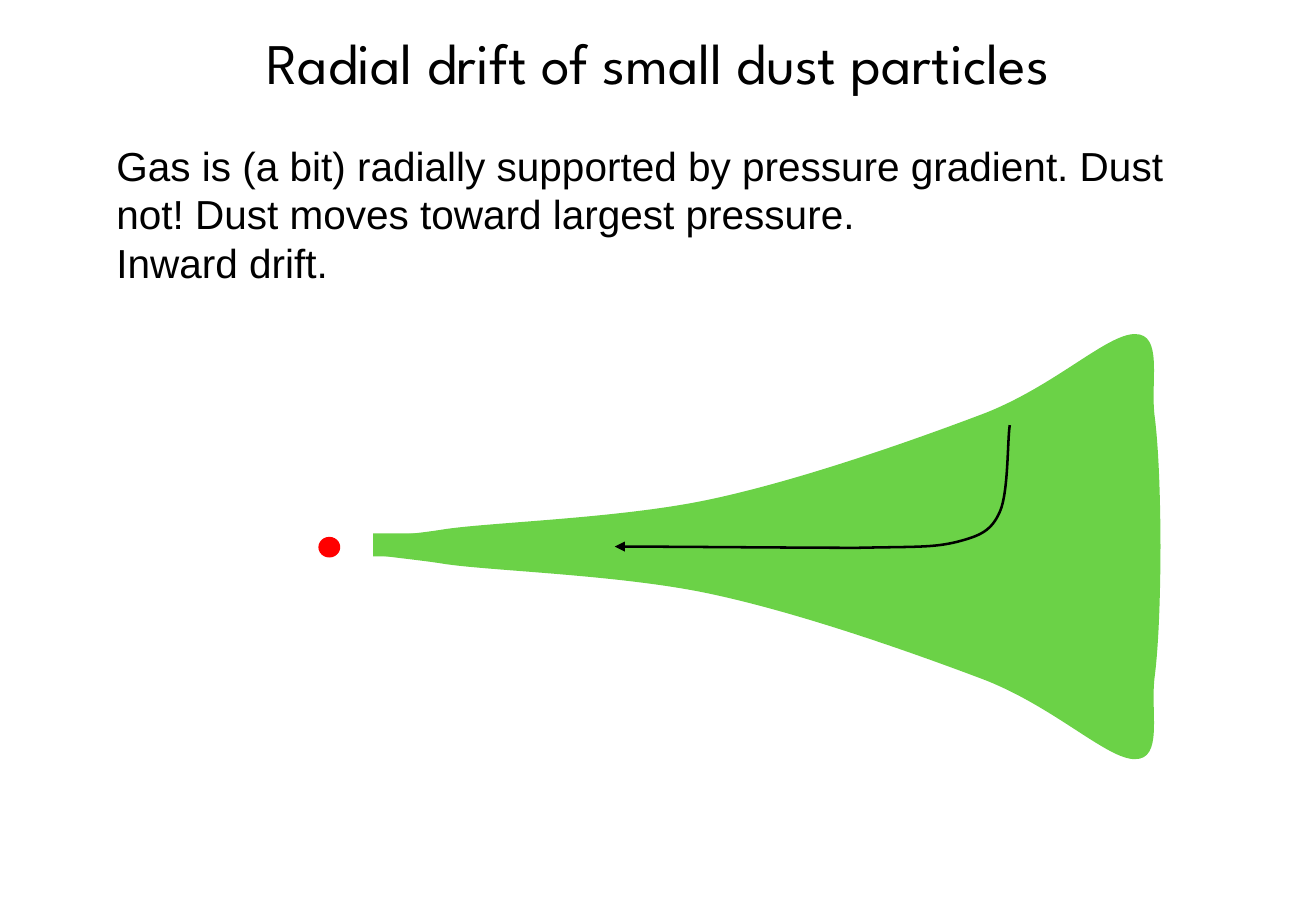
import lxml.etree
import pptx
import pptx.dml.color
import pptx.enum.shapes
import pptx.enum.text
import pptx.oxml.ns
import pptx.util

Inches = pptx.util.Inches
Pt = pptx.util.Pt
Shape = pptx.enum.shapes.MSO_SHAPE
qn = pptx.oxml.ns.qn

COLORS = {"text": "000000", "gas": "6BD247", "star": "FF0000"}

# Curves in inches: distance from the star's left edge, height above the midplane.
# After the start, each row is two control points and an end point.
GAS_CURVES = [
    (0.98, 0.02),
    (0, 0.05), (0.65, 0.08), (1.02, 0.14),
    (1.39, 0.2), (2.49, 0.23), (3.23, 0.39),
    (3.98, 0.55), (4.91, 0.88), (5.49, 1.1),
    (6.07, 1.33), (6.49, 1.75), (6.72, 1.75),
    (6.95, 1.75), (6.85, 1.38), (6.88, 1.09),
    (6.92, 0.79), (6.93, 0.32), (6.93, -0.02),
    (4, -0.03), (1.6, -0.02), (0.98, 0.02),
]
DRIFT_CURVES = [
    (5.69, 1.0),
    (5.67, 0.88), (5.68, 0.45), (5.61, 0.29),
    (5.54, 0.13), (5.45, 0.09), (5.26, 0.04),
    (5.06, -0.01), (4.91, 0), (4.44, -0.01),
    (3.97, -0.01), (2.85, 0), (2.44, 0),
]


def rgb(name):
    return pptx.dml.color.RGBColor.from_string(COLORS[name])


def paint(shape, color):
    shape.shadow.inherit = False
    shape.fill.solid()
    shape.fill.fore_color.rgb = rgb(color)
    shape.line.fill.background()


def set_font(para, name, size):
    para.font.name = name
    para.font.size = Pt(size)
    para.font.color.rgb = rgb("text")


def add_curve(shapes, box, points, side=1, close=True):
    """Bezier outline; side is 1 above the midplane, -1 below."""
    left, top, _, height = box
    middle = top + height / 2
    spots = [(Inches(left + x), Inches(middle - side * y)) for x, y in points]
    builder = shapes.build_freeform(*spots[0])
    builder.add_line_segments(spots[1:], close=close)
    shape = builder.convert_to_shape()

    # Merge every three line segments into one cubic curve
    segments = list(shape.element.iter(qn("a:lnTo")))
    for index in range(0, len(segments), 3):
        curve = lxml.etree.Element(qn("a:cubicBezTo"))
        segments[index].addprevious(curve)
        for segment in segments[index:index + 3]:
            curve.append(segment[0])
            segment.getparent().remove(segment)
    return shape


def add_title(page, box, text):
    title = page.shapes.title
    title.left, title.top, title.width, title.height = map(Inches, box)
    title.text_frame.text = text
    title.text_frame.vertical_anchor = pptx.enum.text.MSO_ANCHOR.MIDDLE
    para = title.text_frame.paragraphs[0]
    para.alignment = pptx.enum.text.PP_ALIGN.CENTER
    set_font(para, "League Spartan", 34)


def add_explanation(page, box, lines):
    frame = page.shapes.add_textbox(*map(Inches, box)).text_frame
    frame.word_wrap = True
    frame.auto_size = pptx.enum.text.MSO_AUTO_SIZE.SHAPE_TO_FIT_TEXT
    frame.text = "\n".join(lines)
    for para in frame.paragraphs:
        set_font(para, "Arial", 24)


def add_disc(page, box):
    left, top, _, height = box
    middle = top + height / 2

    # Star
    star = page.shapes.add_shape(
        Shape.OVAL, *map(Inches, (left, middle - 0.08, 0.18, 0.17)))
    paint(star, "star")

    # Gas: two mirrored halves and the narrow inner edge
    gas = page.shapes.add_group_shape()
    for side in (1, -1):
        paint(add_curve(gas.shapes, box, GAS_CURVES, side), "gas")
    inner_edge = gas.shapes.add_shape(
        Shape.RECTANGLE, *map(Inches, (left + 0.45, middle - 0.11, 1.81, 0.19)))
    paint(inner_edge, "gas")

    # Drift arrow
    arrow = add_curve(page.shapes, box, DRIFT_CURVES, close=False)
    arrow.shadow.inherit = False
    arrow.fill.background()
    arrow.line.color.rgb = rgb("text")
    arrow.line.width = Pt(1.5)
    line = arrow.element.spPr.find(qn("a:ln"))
    lxml.etree.SubElement(line, qn("a:round"))
    lxml.etree.SubElement(line, qn("a:tailEnd"), type="triangle")


def main():
    deck = pptx.Presentation()
    deck.slide_width, deck.slide_height = Inches(10.83), Inches(7.5)
    page = deck.slides.add_slide(deck.slide_layouts[5])
    add_title(page, (0.36, 0.17, 10.11, 0.67), "Radial drift of small dust particles")
    add_explanation(page, (0.86, 1.11, 9.34, 1.31), [
        "Gas is (a bit) radially supported by pressure gradient. Dust not! "
        "Dust moves toward largest pressure.",
        "Inward drift.",
    ])
    add_disc(page, (2.62, 2.75, 6.95, 3.5))
    deck.save("out.pptx")


if __name__ == "__main__":
    main()
